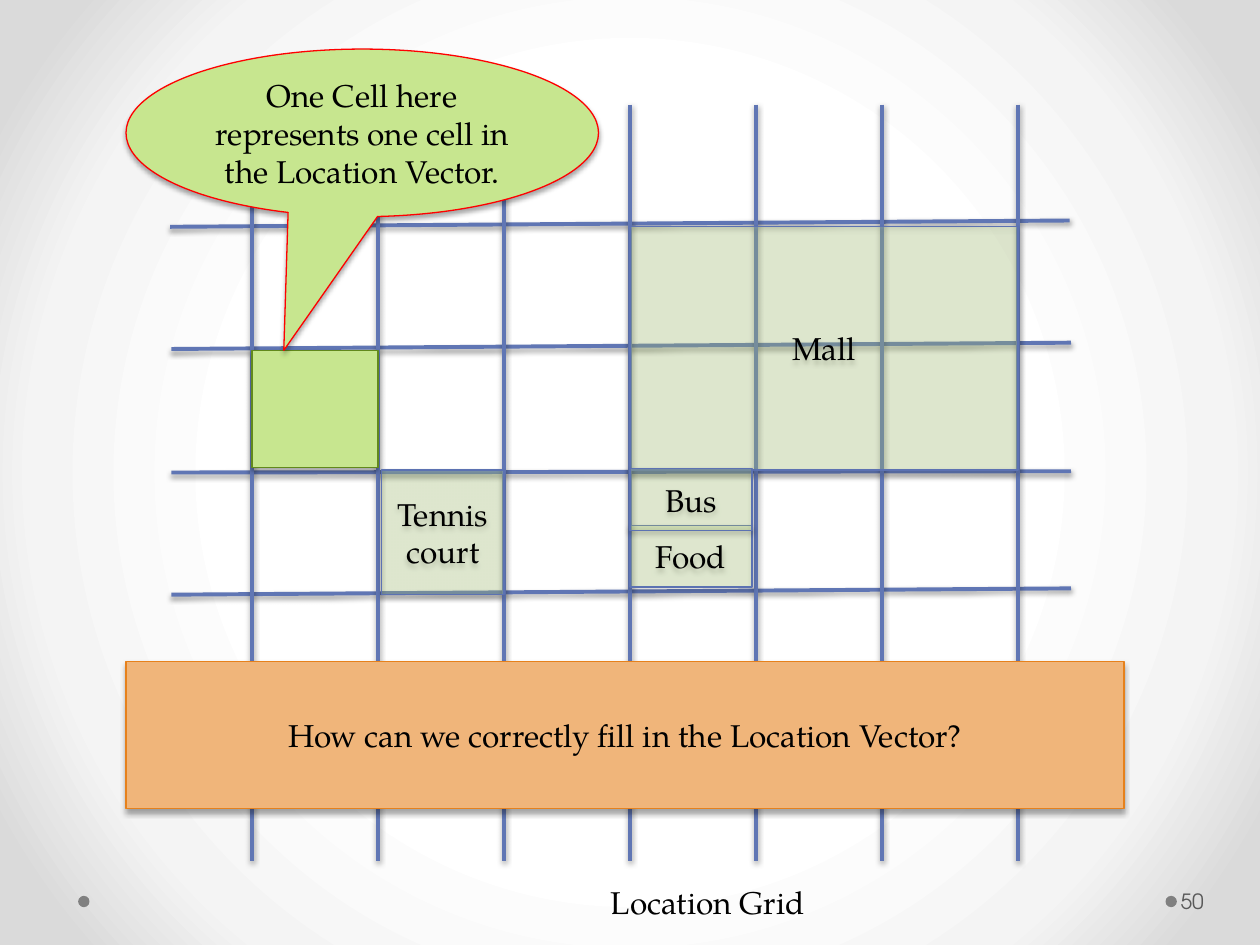
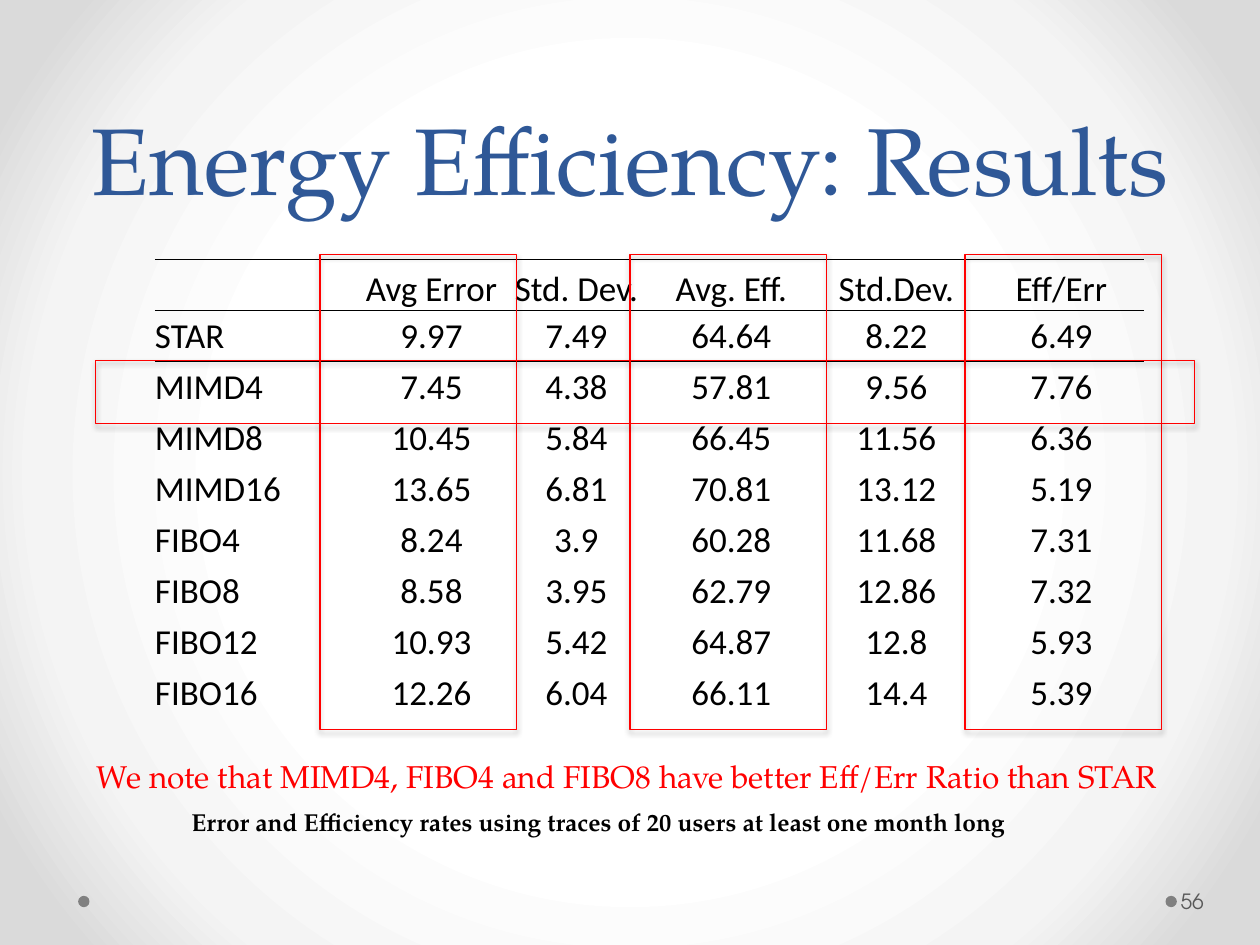
from lxml import etree
from pptx import Presentation
from pptx.dml.color import RGBColor
from pptx.enum.shapes import MSO_CONNECTOR, MSO_SHAPE
from pptx.enum.text import MSO_ANCHOR, MSO_AUTO_SIZE, PP_ALIGN
from pptx.oxml import parse_xml
from pptx.oxml.ns import nsdecls, qn
from pptx.util import Inches, Pt

COLS, ROWS = 10, 7.5
CELL = Inches(1)

BLACK = RGBColor(0x00, 0x00, 0x00)
WHITE = RGBColor(0xFF, 0xFF, 0xFF)
PALE = RGBColor(0xF4, 0xF4, 0xF4)
SILVER = RGBColor(0xDA, 0xDA, 0xDA)
GRAY = RGBColor(0x80, 0x80, 0x80)
DARK_GRAY = RGBColor(0x59, 0x59, 0x59)
TITLE_BLUE = RGBColor(0x2F, 0x58, 0x97)
GRID_BLUE = RGBColor(0x60, 0x76, 0xB4)
EDGE_BLUE = RGBColor(0x5C, 0x72, 0xB2)
GREEN = RGBColor(0xC7, 0xE6, 0x8F)
DARK_GREEN = RGBColor(0x62, 0x89, 0x1C)
ORANGE = RGBColor(0xF0, 0xB5, 0x7A)
DARK_ORANGE = RGBColor(0xE6, 0x81, 0x1C)
RED = RGBColor(0xFF, 0x00, 0x00)

SERIF, SANS, TABLE_FONT = "TeX Gyre Pagella", "TeX Gyre Adventor", "Calibri"
NO_STYLE = "{2D5ABB26-0587-4C30-8999-92F81FD0307C}"

RESULTS = [
    ("", "Avg Error", "Std. Dev.", "Avg. Eff.", "Std.Dev.", "Eff/Err"),
    ("STAR", "9.97", "7.49", "64.64", "8.22", "6.49"),
    ("MIMD4", "7.45", "4.38", "57.81", "9.56", "7.76"),
    ("MIMD8", "10.45", "5.84", "66.45", "11.56", "6.36"),
    ("MIMD16", "13.65", "6.81", "70.81", "13.12", "5.19"),
    ("FIBO4", "8.24", "3.9", "60.28", "11.68", "7.31"),
    ("FIBO8", "8.58", "3.95", "62.79", "12.86", "7.32"),
    ("FIBO12", "10.93", "5.42", "64.87", "12.8", "5.93"),
    ("FIBO16", "12.26", "6.04", "66.11", "14.4", "5.39"),
]


def cells(*counts):
    return [int(n * CELL) for n in counts]


def set_text(tf, text, size=18, color=BLACK, font=SERIF, bold=False, align=PP_ALIGN.LEFT):
    tf.text = text
    p = tf.paragraphs[0]
    p.alignment = align
    for r in p.runs:
        r.font.name = font
        r.font.size = Pt(size)
        r.font.bold = bold
        r.font.color.rgb = color


def add_shadow(sp, alpha, dist):
    spPr = sp._element.spPr
    effects = spPr.find(qn("a:effectLst"))
    if effects is None:
        effects = etree.SubElement(spPr, qn("a:effectLst"))
    effects.append(parse_xml(
        f'<a:outerShdw {nsdecls("a")} blurRad="{Pt(3.1)}" dist="{Pt(dist)}" dir="5400000" '
        f'rotWithShape="0"><a:srgbClr val="{BLACK}"><a:alpha val="{alpha * 1000}"/>'
        f'</a:srgbClr></a:outerShdw>'))


def add_box(slide, place, line, fill=None, text="", alpha=None, kind=MSO_SHAPE.RECTANGLE):
    sp = slide.shapes.add_shape(kind, *cells(*place))
    sp.shadow.inherit = False
    sp.line.color.rgb = line
    sp.line.width = Pt(0.75)
    if fill is None:
        sp.fill.background()
    else:
        sp.fill.solid()
        sp.fill.fore_color.rgb = fill
    if alpha:
        color = sp._element.spPr.find(qn("a:solidFill"))[0]
        etree.SubElement(color, qn("a:alpha")).set("val", str(alpha * 1000))
    add_shadow(sp, 35, 1.8)
    if text:
        sp.text_frame.word_wrap = True
        sp.text_frame.vertical_anchor = MSO_ANCHOR.MIDDLE
        set_text(sp.text_frame, text, align=PP_ALIGN.CENTER)
    return sp


def add_grid_line(slide, x1, y1, x2, y2):
    cxn = slide.shapes.add_connector(MSO_CONNECTOR.STRAIGHT, *cells(x1, y1, x2, y2))
    cxn.line.color.rgb = GRID_BLUE
    cxn.line.width = Pt(2.25)
    add_shadow(cxn, 38, 1.6)


def add_label(slide, place, text, wrap=True, **style):
    tf = slide.shapes.add_textbox(*cells(*place)).text_frame
    tf.word_wrap = wrap
    set_text(tf, text, **style)
    return tf


def add_footer(slide, number):
    for x in (0.62, 9.25):
        dot = slide.shapes.add_shape(MSO_SHAPE.OVAL, *cells(x, 7.11, 0.09, 0.09))
        dot.shadow.inherit = False
        dot.fill.solid()
        dot.fill.fore_color.rgb = GRAY
        dot.line.fill.background()
    tf = add_label(slide, (9.34, 6.95, 0.61, 0.4), str(number),
                   size=12, color=DARK_GRAY, font=SANS)
    tf.vertical_anchor = MSO_ANCHOR.MIDDLE
    tf.margin_left, tf.margin_right = Inches(0.03), Inches(0.05)


def set_background(master):
    master.background.fill.solid()
    solid = next(master._element.iter(qn("a:solidFill")))
    stops = "".join(f'<a:gs pos="{pos * 1000}"><a:srgbClr val="{color}"/></a:gs>'
                    for pos, color in ((50, WHITE), (76, PALE), (92, SILVER)))
    solid.getparent().replace(solid, parse_xml(
        f'<a:gradFill {nsdecls("a")} rotWithShape="1"><a:gsLst>{stops}</a:gsLst>'
        '<a:path path="circle"><a:fillToRect l="50000" t="50000" r="50000" b="50000"/>'
        '</a:path></a:gradFill>'))


def set_title(slide, text):
    sp = slide.shapes.title
    sp.left, sp.top, sp.width, sp.height = cells(0.5, 0, 9, 1.75)
    tf = sp.text_frame
    tf.auto_size = MSO_AUTO_SIZE.NONE
    tf.vertical_anchor = MSO_ANCHOR.BOTTOM
    set_text(tf, text, size=54, color=TITLE_BLUE, align=PP_ALIGN.CENTER)
    tf.paragraphs[0].line_spacing = Pt(58)


def add_border(cell, sides):
    tcPr = cell._tc.get_or_add_tcPr()
    for i, side in enumerate(sides):
        tcPr.insert(i, parse_xml(
            f'<a:ln{side} {nsdecls("a")} w="{Pt(1)}"><a:solidFill><a:srgbClr val="{BLACK}"/>'
            f'</a:solidFill></a:ln{side}>'))


def add_results(slide):
    frame = slide.shapes.add_table(len(RESULTS), len(RESULTS[0]), *cells(1.23, 2.06, 7.85, 3.65))
    table = frame.table
    table.first_row = table.horz_banding = False
    table._tbl.tblPr.find(qn("a:tableStyleId")).text = NO_STYLE
    for column, width in zip(table.columns, cells(1.62, 1.15, 1.15, 1.31, 1.31, 1.31)):
        column.width = width
    for i, values in enumerate(RESULTS):
        for j, value in enumerate(values):
            cell = table.cell(i, j)
            cell.fill.background()
            cell.margin_left = cell.margin_right = cell.margin_top = cell.margin_bottom = 0
            cell.vertical_anchor = MSO_ANCHOR.MIDDLE if i else MSO_ANCHOR.BOTTOM
            set_text(cell.text_frame, value, size=20, font=TABLE_FONT,
                     align=PP_ALIGN.CENTER if j else PP_ALIGN.LEFT)
            if i < 2:
                add_border(cell, "T" if i else "TB")


def build_location_grid(prs):
    slide = prs.slides.add_slide(prs.slide_layouts[6])
    add_footer(slide, 50)
    for x, y, rise in ((1.35, 1.8, 0.05), (1.36, 3.75, 0.01), (1.36, 2.77, 0.05),
                       (1.36, 4.72, 0.05), (1.39, 5.72, 0.05)):
        add_grid_line(slide, x, y, x + 7.14, y - rise)
    for x in (*range(2, 8), 8.08):
        add_grid_line(slide, x, 0.83, x, 6.83)
    add_label(slide, (4.75, 6.96, 4.17, 0.4), "Location Grid")
    add_box(slide, (2, 2.78, 1, 0.93), DARK_GREEN, GREEN)
    callout = add_box(slide, (1, 0.39, 3.75, 1.33), RED, GREEN,
                      "One Cell here represents one cell in the Location Vector.",
                      kind=MSO_SHAPE.OVAL_CALLOUT)
    callout.adjustments[0], callout.adjustments[1] = -0.166, 1.298
    for place, name in (((5, 1.8, 3.08, 1.93), "Mall"),
                        ((3.03, 3.73, 0.97, 0.99), "Tennis court"),
                        ((5, 4.17, 0.97, 0.49), "Food"),
                        ((5, 3.72, 0.97, 0.49), "Bus")):
        add_box(slide, place, EDGE_BLUE, GREEN, name, alpha=28)
    add_box(slide, (1, 5.25, 7.92, 1.17), DARK_ORANGE, ORANGE,
            "How can we correctly fill in the Location Vector?")


def build_energy_results(prs):
    slide = prs.slides.add_slide(prs.slide_layouts[5])
    add_footer(slide, 56)
    set_title(slide, "Energy Efficiency: Results")
    add_results(slide)
    add_label(slide, (1.42, 6.36, 6.69, 0.34),
              "Error and Efficiency rates using traces of 20 users at least one month long",
              wrap=False, size=14, bold=True)
    for x in (2.54, 5, 7.66):
        add_box(slide, (x, 2.02, 1.56, 3.77), RED)
    add_box(slide, (0.76, 2.86, 8.72, 0.5), RED)
    add_label(slide, (0.67, 5.96, 8.67, 0.4),
              "We note that MIMD4, FIBO4 and FIBO8 have better Eff/Err Ratio than STAR",
              wrap=False, color=RED)


def main():
    prs = Presentation()
    prs.slide_width, prs.slide_height = cells(COLS, ROWS)
    set_background(prs.slide_master)
    build_location_grid(prs)
    build_energy_results(prs)
    prs.save("out.pptx")


if __name__ == "__main__":
    main()
